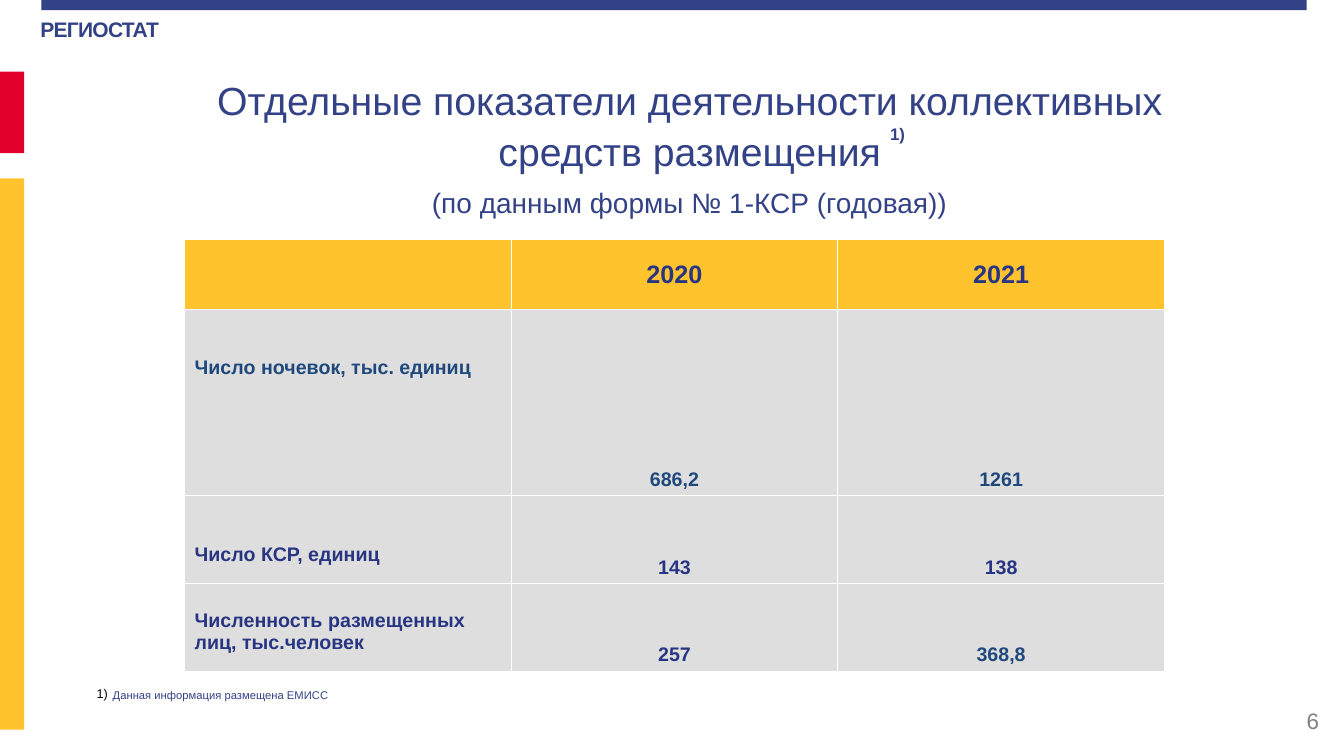
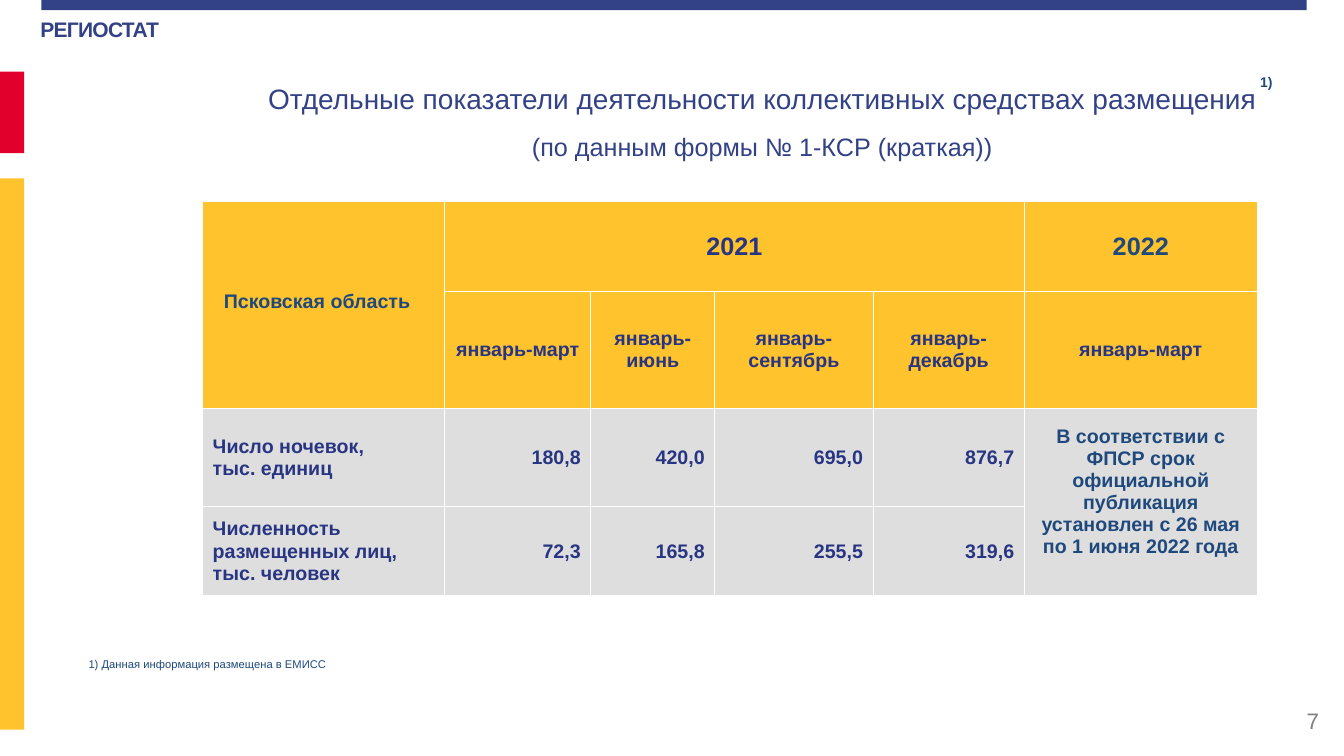
from pptx import Presentation
from pptx.dml.color import RGBColor
from pptx.enum.shapes import MSO_SHAPE
from pptx.enum.text import MSO_ANCHOR, MSO_AUTO_SIZE, PP_ALIGN
from pptx.util import Inches, Pt

RECT = MSO_SHAPE.RECTANGLE
LEFT, CENTER, RIGHT = PP_ALIGN.LEFT, PP_ALIGN.CENTER, PP_ALIGN.RIGHT
TOP, MIDDLE, BOTTOM = MSO_ANCHOR.TOP, MSO_ANCHOR.MIDDLE, MSO_ANCHOR.BOTTOM
NO_AUTOFIT = MSO_AUTO_SIZE.NONE

NAVY = RGBColor(0x33, 0x42, 0x86)
INDIGO = RGBColor(0x28, 0x35, 0x83)
BLUE = RGBColor(0x1F, 0x49, 0x7D)
RED = RGBColor(0xE1, 0x00, 0x2B)
BAND_YELLOW = RGBColor(0xFF, 0xC3, 0x2E)
HEAD_YELLOW = RGBColor(0xFF, 0xC3, 0x2D)
BODY_GRAY = RGBColor(0xDE, 0xDE, 0xDE)
PAGE_GRAY = RGBColor(0x80, 0x80, 0x80)
BLACK = RGBColor(0, 0, 0)

FONT = "Arial"
TITLE_ONLY = 5
BANDS = [
    ((0.41, 0, 12.55, 0.1), NAVY),
    ((0, 0.71, 0.24, 0.81), RED),
    ((0, 1.77, 0.24, 5.47), BAND_YELLOW),
]


def format_paragraph(p, size, color, bold=False, align=LEFT):
    p.alignment = align
    for r in p.runs:
        r.font.name = FONT
        r.font.size = Pt(size)
        r.font.bold = bold
        r.font.color.rgb = color


def add_band(s, box, color):
    sp = s.shapes.add_shape(RECT, *map(Inches, box))
    sp.shadow.inherit = False
    sp.fill.solid()
    sp.fill.fore_color.rgb = color
    sp.line.fill.background()


def add_text(s, box, text, size, color, bold=False, align=LEFT, wrap=True):
    tf = s.shapes.add_textbox(*map(Inches, box)).text_frame
    tf.word_wrap = wrap
    tf.text = text
    format_paragraph(tf.paragraphs[0], size, color, bold, align)
    return tf


def add_agency_name(s):
    tf = add_text(s, (0.4, 0.13, 1.6, 0.27), "РЕГИОСТАТ", 15, NAVY, bold=True)
    tf.margin_left = tf.margin_right = tf.margin_bottom = 0
    tf.margin_top = Inches(0.03)
    tf.paragraphs[0].runs[0]._r.get_or_add_rPr().set("spc", "-50")


def set_title(s, box, lines, sizes, gap):
    title = s.shapes.title
    title.left, title.top, title.width, title.height = map(Inches, box)
    tf = title.text_frame
    tf.auto_size = NO_AUTOFIT
    tf.word_wrap = True
    tf.vertical_anchor = TOP
    tf.text = "\n".join(lines)
    for p, size in zip(tf.paragraphs, sizes):
        format_paragraph(p, size, NAVY, align=CENTER)
        p.line_spacing = 1.08
    tf.paragraphs[1].space_before = Pt(gap)


def add_slide(prs, number, title_box, lines, sizes, gap):
    s = prs.slides.add_slide(prs.slide_layouts[TITLE_ONLY])
    add_agency_name(s)
    for box, color in BANDS:
        add_band(s, box, color)
    set_title(s, title_box, lines, sizes, gap)
    tf = add_text(s, (10.18, 6.95, 3, 0.4), str(number), 16, PAGE_GRAY, align=RIGHT)
    tf.vertical_anchor = MIDDLE
    return s


def add_grid(s, left, top, widths, heights, head_rows):
    frame = s.shapes.add_table(len(heights), len(widths), Inches(left), Inches(top),
                               Inches(sum(widths)), Inches(sum(heights)))
    table = frame.table
    table.horz_banding = False
    for column, width in zip(table.columns, widths):
        column.width = Inches(width)
    for i, (row, height) in enumerate(zip(table.rows, heights)):
        row.height = Inches(height)
        for cell in row.cells:
            cell.fill.solid()
            cell.fill.fore_color.rgb = HEAD_YELLOW if i < head_rows else BODY_GRAY
    return table


def set_cell(cell, text, color=INDIGO, size=14, align=CENTER, anchor=MIDDLE):
    cell.text = text
    cell.vertical_anchor = anchor
    format_paragraph(cell.text_frame.paragraphs[0], size, color, True, align)


def build_annual(prs):
    s = add_slide(prs, 6, (1.61, 0.67, 10.46, 1.5),
                  ["Отдельные показатели деятельности коллективных средств размещения",
                   "(по данным формы № 1-КСР (годовая))"], (28, 20), 6)
    table = add_grid(s, 1.83, 2.38, [3.24] * 3, [0.69, 1.85, 0.87, 0.87], 1)
    for col, year in enumerate(("2020", "2021"), 1):
        set_cell(table.cell(0, col), year, size=18)
    rows = [
        ("Число ночевок, тыс. единиц", 0.47, ("686,2", "1261"), (BLUE, BLUE, BLUE)),
        ("Число КСР, единиц", 0.47, ("143", "138"), (INDIGO, INDIGO, INDIGO)),
        ("Численность размещенных лиц, тыс.человек", 0.26, ("257", "368,8"),
         (INDIGO, INDIGO, BLUE)),
    ]
    for i, (label, offset, values, colors) in enumerate(rows, 1):
        cell = table.cell(i, 0)
        set_cell(cell, label, colors[0], align=LEFT, anchor=TOP)
        cell.margin_top = Inches(offset)
        for col, value in enumerate(values, 1):
            set_cell(table.cell(i, col), value, colors[col], anchor=BOTTOM)
    add_text(s, (1.02, 6.78, 3.16, 0.24), "Данная информация размещена ЕМИСС", 8, NAVY)
    add_text(s, (8.73, 1.18, 0.35, 0.3), "1)", 12, NAVY, bold=True, wrap=False)
    add_text(s, (0.86, 6.76, 0.31, 0.25), "1)", 9, BLACK, wrap=False)


def build_quarterly(prs):
    s = add_slide(prs, 7, (2.42, 0.73, 10.28, 0.99),
                  ["Отдельные показатели деятельности коллективных средствах размещения",
                   "(по данным формы № 1-КСР (краткая))"], (20, 18), 10)
    table = add_grid(s, 2.01, 2, [2.4, 1.45, 1.23, 1.57, 1.5, 2.31],
                     [0.89, 1.16, 0.97, 0.89], 2)
    table.first_row = False
    for first, last in (((0, 0), (1, 0)), ((0, 1), (0, 4)), ((2, 5), (3, 5))):
        table.cell(*first).merge(table.cell(*last))

    region = table.cell(0, 0)
    set_cell(region, "Псковская область", BLUE, align=LEFT, anchor=TOP)
    region.margin_top = Inches(0.88)
    region.margin_left = Inches(0.21)
    set_cell(table.cell(0, 1), "2021", size=18)
    set_cell(table.cell(0, 5), "2022", BLUE, 18)
    periods = ("январь-март", "январь-июнь", "январь-сентябрь", "январь-декабрь", "январь-март")
    for col, period in enumerate(periods, 1):
        set_cell(table.cell(1, col), period)

    rows = [
        ("Число ночевок,\vтыс. единиц", ("180,8", "420,0", "695,0", "876,7")),
        ("Численность размещенных лиц, тыс. человек", ("72,3", "165,8", "255,5", "319,6")),
    ]
    for i, (label, values) in enumerate(rows, 2):
        set_cell(table.cell(i, 0), label, align=LEFT)
        for col, value in enumerate(values, 1):
            set_cell(table.cell(i, col), value, align=RIGHT)
    release = table.cell(2, 5)
    set_cell(release, "В соответствии с ФПСР срок официальной публикация "
                      "установлен с 26 мая по 1 июня 2022 года", BLUE)
    release.margin_bottom = Inches(0.27)

    add_text(s, (0.78, 6.47, 3.27, 0.24), "1) Данная информация размещена в ЕМИСС", 8, BLUE)
    add_text(s, (12.4, 0.68, 0.4, 0.27), "1)", 10, BLUE, bold=True)


def main():
    prs = Presentation()
    prs.slide_width = Inches(13.33)
    prs.slide_height = Inches(7.5)
    build_annual(prs)
    build_quarterly(prs)
    prs.save("out.pptx")


if __name__ == "__main__":
    main()
